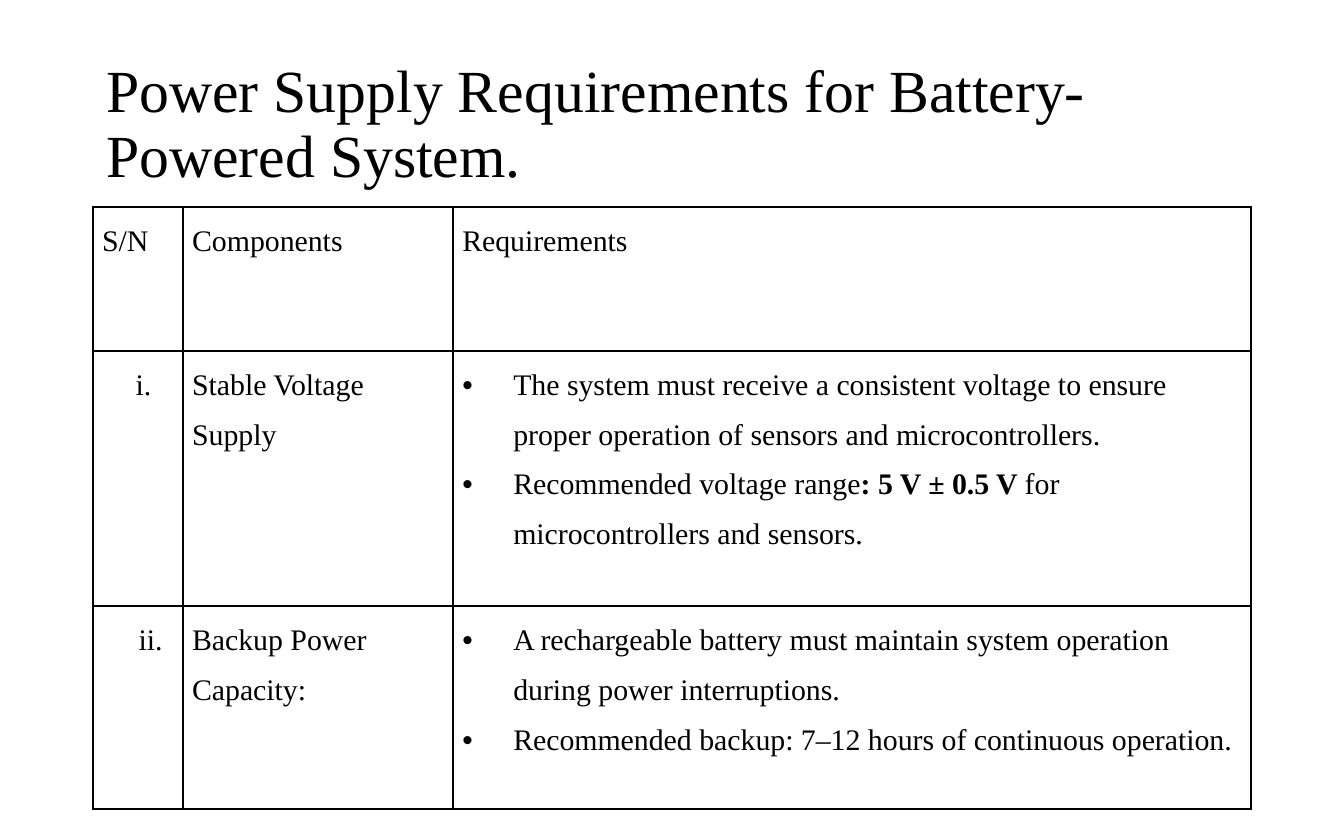
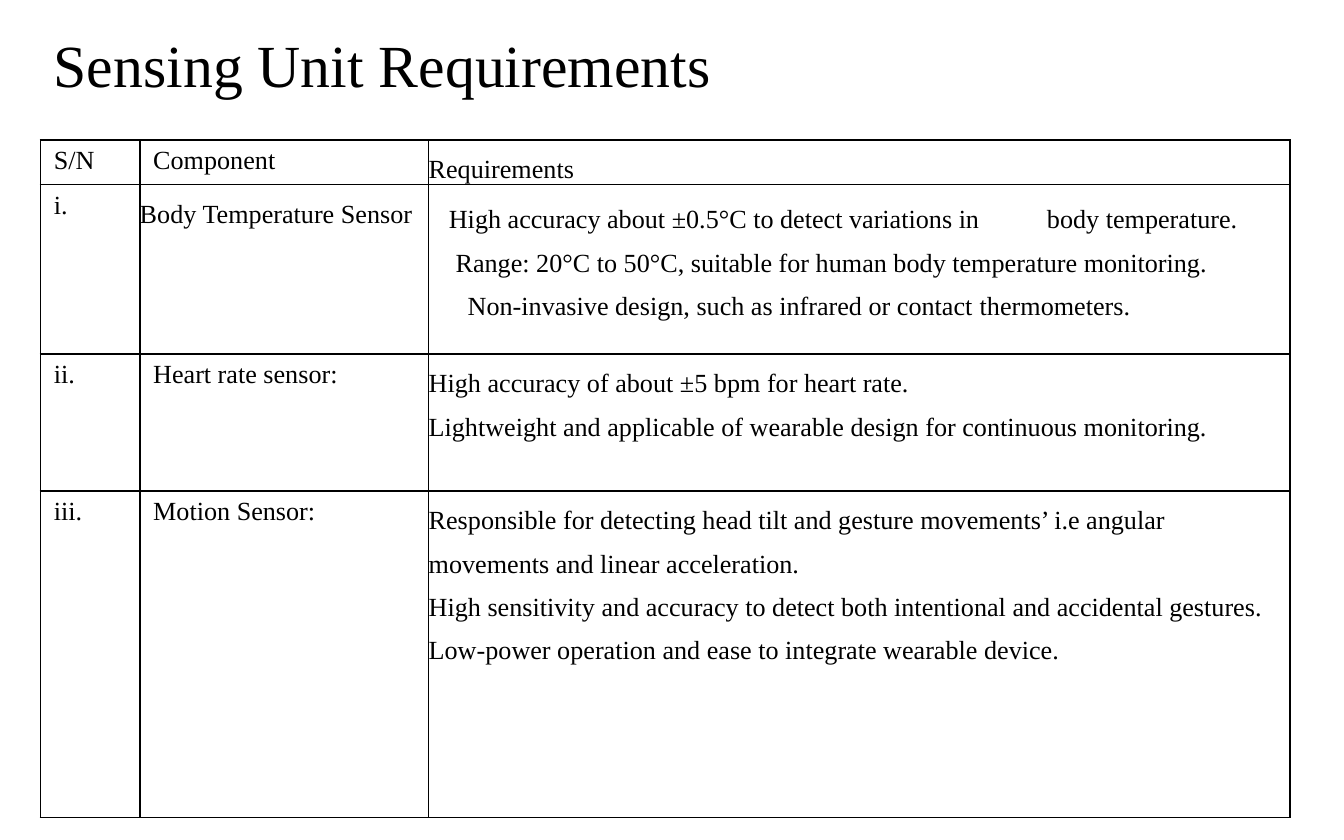
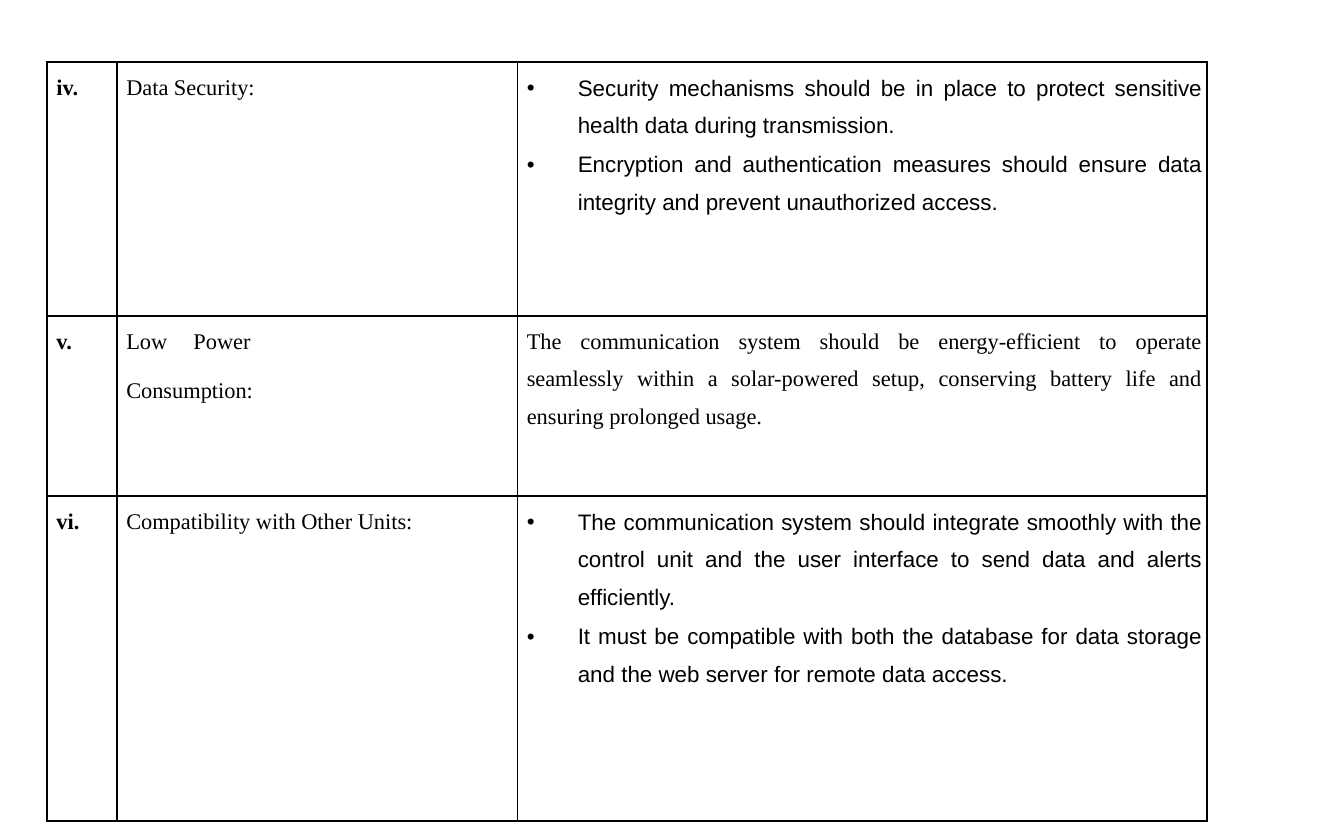
from dataclasses import dataclass

from lxml import etree
from pptx import Presentation
from pptx import util as u
from pptx.dml.color import RGBColor
from pptx.enum import text
from pptx.oxml.ns import qn

PX = 9144  # EMU per px, at 100 px to the inch
INK = "000000"
SERIF, SANS = "Times New Roman", "Arial"
JUSTIFY, RIGHT = text.PP_ALIGN.JUSTIFY, text.PP_ALIGN.RIGHT
TITLE_ONLY, BLANK = 5, 6
HANG = 38

# Cell margins: left, top, right, bottom
ROOMY = (10, 5, 10, 5)
FLUSH = (0, 1, 1, 0)
COMPACT = (7, 1, 1, 0)
COMPACT_WIDE = (7, 1, 3, 0)
NUMERAL = (7, 1, 15, 0)


def color(hex_code):
    return RGBColor.from_string(hex_code)


def add_xml(parent, tag, **attributes):
    values = {name: str(value) for name, value in attributes.items()}
    return etree.SubElement(parent, qn(tag), values)


@dataclass
class Line:
    """One paragraph; in a tuple of words every second part is bold."""
    words: str | tuple
    spacing: float = 1.5
    align: text.PP_ALIGN = text.PP_ALIGN.LEFT
    margin: int = 0
    indent: int = 0
    bullet: bool = False
    tab: tuple = ()
    after: float = 0
    bold: bool = False
    font: str = SERIF


@dataclass
class Cell:
    lines: list
    inset: tuple = ROOMY


def bullets(*items, **style):
    return [Line(item, margin=HANG, indent=-HANG, bullet=True, **style)
            for item in items]


class Deck:
    def __init__(self, width, height):
        self.prs = Presentation()
        self.prs.slide_width = width * PX
        self.prs.slide_height = height * PX
        self.slide = None

    def add_slide(self, layout):
        self.slide = self.prs.slides.add_slide(self.prs.slide_layouts[layout])

    def title(self, words, left, top, width, height):
        heading = self.slide.shapes.title
        heading.left, heading.top = left * PX, top * PX
        heading.width, heading.height = width * PX, height * PX
        frame = heading.text_frame
        frame.text = words
        frame.word_wrap = True
        frame.auto_size = text.MSO_AUTO_SIZE.NONE
        frame.vertical_anchor = text.MSO_ANCHOR.MIDDLE
        paragraph = frame.paragraphs[0]
        paragraph.alignment = text.PP_ALIGN.LEFT
        paragraph.line_spacing = 0.9
        self.style_run(paragraph.runs[0], 32, SERIF, False)

    def style_run(self, run, size, font, bold):
        run.font.size = u.Pt(size)
        run.font.name = font
        run.font.bold = bold
        run.font.color.rgb = color(INK)

    def table(self, left, top, columns, heights, rows, size):
        frame = self.slide.shapes.add_table(
            len(heights), len(columns), left * PX, top * PX,
            sum(columns) * PX, sum(heights) * PX)
        grid = frame.table
        grid.first_row = grid.horz_banding = False
        for column, width in zip(grid.columns, columns):
            column.width = width * PX
        for row, height in zip(grid.rows, heights):
            row.height = height * PX
        for row, contents in zip(grid.rows, rows):
            for cell, content in zip(row.cells, contents):
                self.fill_cell(cell, content, size)

    def fill_cell(self, cell, content, size):
        (cell.margin_left, cell.margin_top,
         cell.margin_right, cell.margin_bottom) = [
            side * PX for side in content.inset]
        cell.fill.background()
        self.border(cell)
        for number, line in enumerate(content.lines):
            frame = cell.text_frame
            paragraph = frame.add_paragraph() if number else frame.paragraphs[0]
            self.set_line(paragraph, line, size)

    def border(self, cell):
        properties = cell._tc.get_or_add_tcPr()
        for position, side in enumerate("LRTB"):
            edge = add_xml(properties, f"a:ln{side}", w=u.Pt(1))
            add_xml(add_xml(edge, "a:solidFill"), "a:srgbClr", val=INK)
            properties.insert(position, edge)

    def set_line(self, paragraph, line, size):
        properties = paragraph._p.get_or_add_pPr()
        properties.set("marL", str(line.margin * PX))
        properties.set("indent", str(line.indent * PX))
        if line.bullet:
            add_xml(add_xml(properties, "a:buClr"), "a:srgbClr", val=INK)
            add_xml(properties, "a:buFont", typeface=SANS)
            add_xml(properties, "a:buChar", char="•")
        if line.tab:
            position, side = line.tab
            add_xml(add_xml(properties, "a:tabLst"), "a:tab",
                    pos=position * PX, algn=side)
        paragraph.alignment = line.align
        paragraph.line_spacing = line.spacing
        paragraph.space_after = u.Pt(line.after)
        if isinstance(line.words, str):
            paragraph.text = line.words
        else:
            for part in line.words:
                paragraph.add_run().text = part
        for number, run in enumerate(paragraph.runs):
            self.style_run(run, size, line.font, line.bold or number % 2 == 1)


def label(words, inset=COMPACT, **style):
    return Cell([Line(words, **style)], inset)


def plain(words):
    return label(words, ROOMY, spacing=1.0)


def power_supply(deck):
    deck.add_slide(TITLE_ONLY)
    deck.title("Power Supply Requirements for Battery-Powered System.",
               69, 33, 862, 121)
    voltage = bullets(
        "The system must receive a consistent voltage to ensure proper "
        "operation of sensors and microcontrollers.",
        ("Recommended voltage range", ": 5 V ± 0.5 V ",
         "for microcontrollers and sensors."))
    backup = bullets(
        "A rechargeable battery must maintain system operation during power "
        "interruptions.",
        "Recommended backup: 7–12 hours of continuous operation.")
    rows = [
        [label("S/N"), label("Components"), label("Requirements")],
        [label("i.", margin=25), label("Stable Voltage Supply"),
         Cell(voltage, COMPACT)],
        [label("ii.", NUMERAL, align=RIGHT), label("Backup Power Capacity:"),
         Cell(backup, COMPACT)],
    ]
    deck.table(69, 154, [67, 201, 594], [107, 190, 151], rows, 16)


def sensing_unit(deck):
    deck.add_slide(TITLE_ONLY)
    deck.title("Sensing Unit Requirements", 30, 10, 862, 82)
    temperature = [
        Line("High accuracy about ±0.5°C to detect variations in\t"
             "body temperature.", indent=5, tab=(423, "l")),
        Line("Range: 20°C to 50°C, suitable for human body temperature "
             "monitoring.", indent=10),
        Line("Non-invasive design, such as infrared or contact\t"
             "thermometers.", indent=19, tab=(419, "l")),
    ]
    heart_rate = [Line(words, align=JUSTIFY) for words in (
        "High accuracy of about ±5 bpm for heart rate.",
        "Lightweight and applicable of wearable design for continuous "
        "monitoring.")]
    motion = [Line(words) for words in (
        "Responsible for detecting head tilt and gesture movements’ i.e "
        "angular movements and linear acceleration.",
        "High sensitivity and accuracy to detect both intentional and "
        "accidental gestures.",
        "Low-power operation and ease to integrate wearable device.")]
    rows = [
        [plain("S/N"), plain("Component"), label("Requirements", FLUSH)],
        [plain("i."), label("Body Temperature Sensor", FLUSH, after=13.7),
         Cell(temperature)],
        [plain("ii."), plain("Heart rate sensor:"), Cell(heart_rate, FLUSH)],
        [plain("iii."), plain("Motion Sensor:"), Cell(motion, FLUSH)],
    ]
    deck.table(30, 104, [74, 215, 641], [32, 126, 102, 243], rows, 14)


def communication_unit(deck):
    deck.add_slide(BLANK)

    def points(first, second):
        lines = bullets(first, second, align=JUSTIFY, font=SANS)
        lines[0].after = 0.9
        return lines

    security = points(
        "Security mechanisms should be in place to protect sensitive health "
        "data during transmission.",
        "Encryption and authentication measures should ensure data integrity "
        "and prevent unauthorized access.")
    low_power = [Line("Low\tPower", tab=(133, "r"), after=6),
                 Line("Consumption:")]
    efficiency = [Line(
        "The communication system should be energy-efficient to operate "
        "seamlessly within a solar-powered setup, conserving battery life and "
        "ensuring prolonged usage.", align=JUSTIFY)]
    compatibility = points(
        "The communication system should integrate smoothly with the control "
        "unit and the user interface to send data and alerts efficiently.",
        "It must be compatible with both the database for data storage and "
        "the web server for remote data access.")
    entries = [
        ("iv.", [Line("Data Security:")], security),
        ("v.", low_power, efficiency),
        ("vi.", [Line("Compatibility with Other Units:")], compatibility),
    ]
    rows = [[Cell(lines, COMPACT_WIDE)
             for lines in ([Line(numeral, bold=True)], component, requirement)]
            for numeral, component, requirement in entries]
    deck.table(35, 46, [52, 298, 513], [189, 134, 242], rows, 12)


def main():
    deck = Deck(1000, 625)
    power_supply(deck)
    sensing_unit(deck)
    communication_unit(deck)
    deck.prs.save("out.pptx")


if __name__ == "__main__":
    main()
